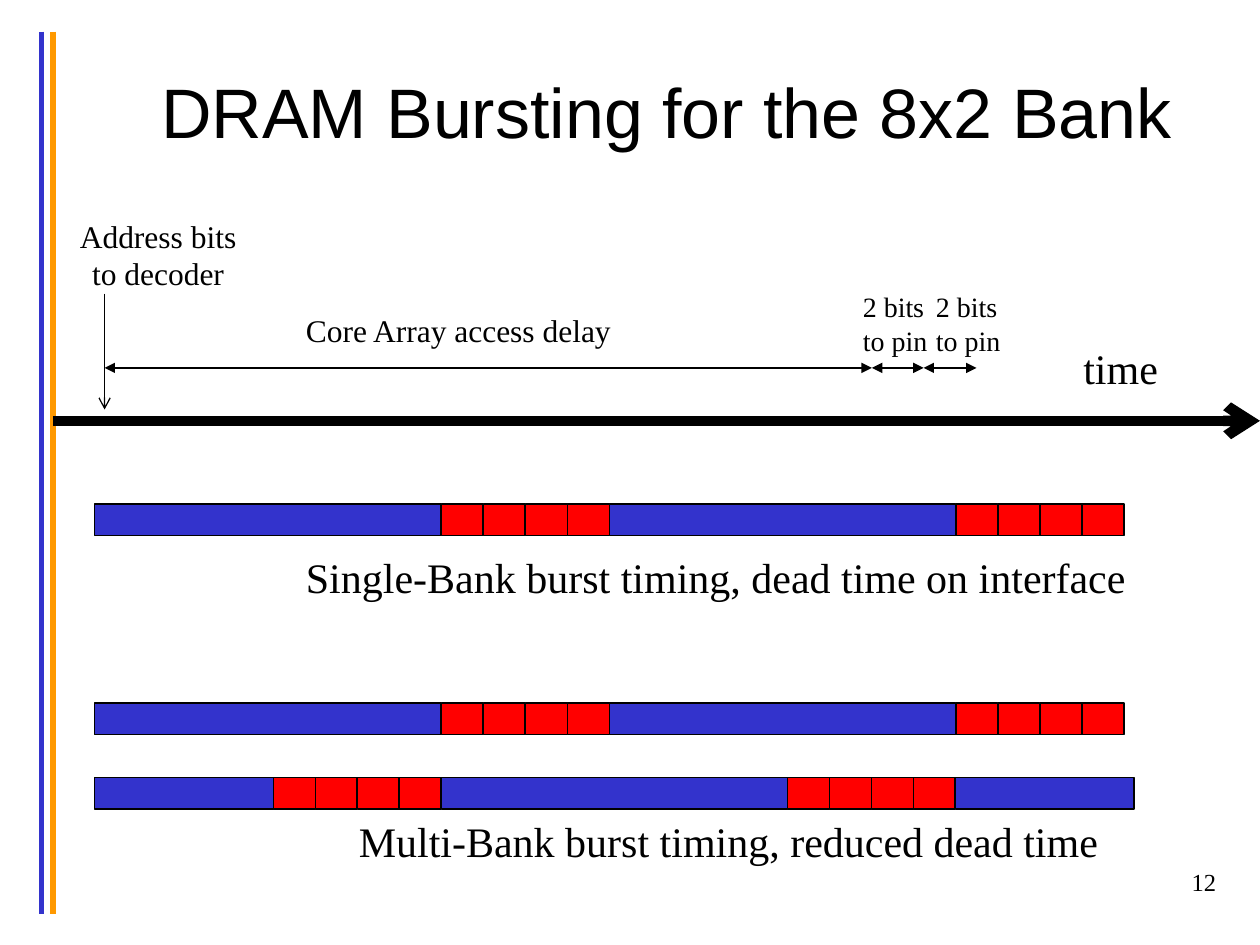
import pptx
import pptx.util
import pptx.dml.color
import pptx.enum.shapes
import pptx.enum.text
import pptx.oxml.ns
import lxml.etree
from pptx.util import Inches

COLORS = {"ink": "000000", "access": "3333CC", "burst": "FF0000", "accent": "FF9900"}
SERIF = "Times New Roman"
LEFT = pptx.enum.text.PP_ALIGN.LEFT
CENTER = pptx.enum.text.PP_ALIGN.CENTER
RIGHT = pptx.enum.text.PP_ALIGN.RIGHT

ACCESS = 2.75        # full core array access
PARTIAL = 1.42       # access time cut off by the ends of the bar
BIT = 1 / 3          # one transfer of a burst
BURST = [("burst", BIT)] * 4
SINGLE_BANK = ([("access", ACCESS)] + BURST) * 2
OFFSET_BANK = ([("access", PARTIAL)] + BURST + [("access", ACCESS)] + BURST
               + [("access", PARTIAL)])


def rgb(name):
    return pptx.dml.color.RGBColor.from_string(COLORS[name])


def format_text(frame, text, size, font, align):
    frame.text = text
    for para in frame.paragraphs:
        para.alignment = align
        for span in para.runs:
            span.font.size = pptx.util.Pt(size)
            span.font.name = font
            span.font.color.rgb = rgb("ink")


def add_label(slide, box, text, size, align=LEFT, wrap=False):
    label = slide.shapes.add_textbox(*map(Inches, box))
    label.text_frame.word_wrap = wrap
    format_text(label.text_frame, text, size, SERIF, align)


def add_line(slide, start, end, color="ink", width=0.75, head=None, tail=None):
    line = slide.shapes.add_connector(
        pptx.enum.shapes.MSO_CONNECTOR.STRAIGHT, *map(Inches, start + end))
    line.line.color.rgb = rgb(color)
    line.line.width = pptx.util.Pt(width)
    properties = line._element.spPr
    outline = properties.find(pptx.oxml.ns.qn("a:ln"))
    for tag, kind in (("a:headEnd", head), ("a:tailEnd", tail)):
        if kind:
            lxml.etree.SubElement(outline, pptx.oxml.ns.qn(tag), type=kind)
    lxml.etree.SubElement(properties, pptx.oxml.ns.qn("a:effectLst"))


def add_side_rules(slide, box):
    left, top, width, height = box
    for x, color in ((left, "access"), (left + width, "accent")):
        add_line(slide, (x, top), (x, top + height), color, 3)


def add_title(slide, box, text):
    title = slide.shapes.title
    title.left, title.top, title.width, title.height = map(Inches, box)
    title.text_frame.vertical_anchor = pptx.enum.text.MSO_ANCHOR.MIDDLE
    format_text(title.text_frame, text, 40, "Arial", CENTER)


def add_timeline(slide, box):
    left, top, width, height = box
    axis = top + height
    add_line(slide, (left, axis), (left + width, axis), width=6, tail="arrow")
    add_label(slide, (left + 8.08, top + 1, 0.8, 0.51), "time", 24)

    # Address arrival
    add_label(slide, (left, top, 1.67, 0.71), "Address bits to decoder", 18, CENTER, True)
    decode = left + 0.41
    add_line(slide, (decode, top + 0.66), (decode, top + 1.58), tail="arrow")

    # Access delay, then two transfers to the pins
    first, second, last = left + 6.5, left + 6.91, left + 7.33
    for start, end in ((decode, first), (first, second), (second, last)):
        add_line(slide, (start, top + 1.25), (end, top + 1.25),
                 head="triangle", tail="triangle")
    add_label(slide, (left + 1.91, top + 0.75, 3, 0.4), "Core Array access delay", 18, wrap=True)
    for x in (left + 6.33, left + 6.91):
        add_label(slide, (x, top + 0.58, 0.72, 0.64), "2 bits\nto pin", 16)


def add_bar(slide, box, segments):
    """Fill the box from left to right with segments in proportion to their times."""
    left, top, width, height = box
    scale = width / sum(time for _, time in segments)
    for color, time in segments:
        block = slide.shapes.add_shape(
            pptx.enum.shapes.MSO_SHAPE.RECTANGLE,
            *map(Inches, (left, top, time * scale, height)))
        block.shadow.inherit = False
        block.fill.solid()
        block.fill.fore_color.rgb = rgb(color)
        block.line.color.rgb = rgb("ink")
        block.line.width = pptx.util.Pt(0.75)
        left += time * scale


def add_single_bank(slide, box):
    left, top, width, height = box
    add_bar(slide, (left, top, width, 0.25), SINGLE_BANK)
    add_label(slide, (left + 1.58, top + 0.33, 6.76, 0.51),
              "Single-Bank burst timing, dead time on interface", 24)


def add_multi_bank(slide, box):
    left, top, width, height = box
    add_bar(slide, (left, top, width, 0.25), SINGLE_BANK)
    add_bar(slide, (left, top + 0.59, width + 0.08, 0.25), OFFSET_BANK)
    add_label(slide, (left + 2, top + 0.84, 6.2, 0.51),
              "Multi-Bank burst timing, reduced dead time", 24)


def main():
    deck = pptx.Presentation()
    deck.slide_width, deck.slide_height = Inches(10), Inches(7.5)
    slide = deck.slides.add_slide(deck.slide_layouts[5])

    add_side_rules(slide, (0.33, 0.25, 0.09, 7))
    add_title(slide, (0.75, 0.25, 9.08, 1.25), "DRAM Bursting for the 8x2 Bank")
    add_timeline(slide, (0.42, 1.67, 9.58, 1.67))
    add_single_bank(slide, (0.75, 4, 8.17, 0.84))
    add_multi_bank(slide, (0.75, 5.58, 8.17, 1.35))
    # Slide number
    add_label(slide, (7.67, 6.83, 2.08, 0.5), "12", 14, RIGHT, True)

    deck.save("out.pptx")


if __name__ == "__main__":
    main()
